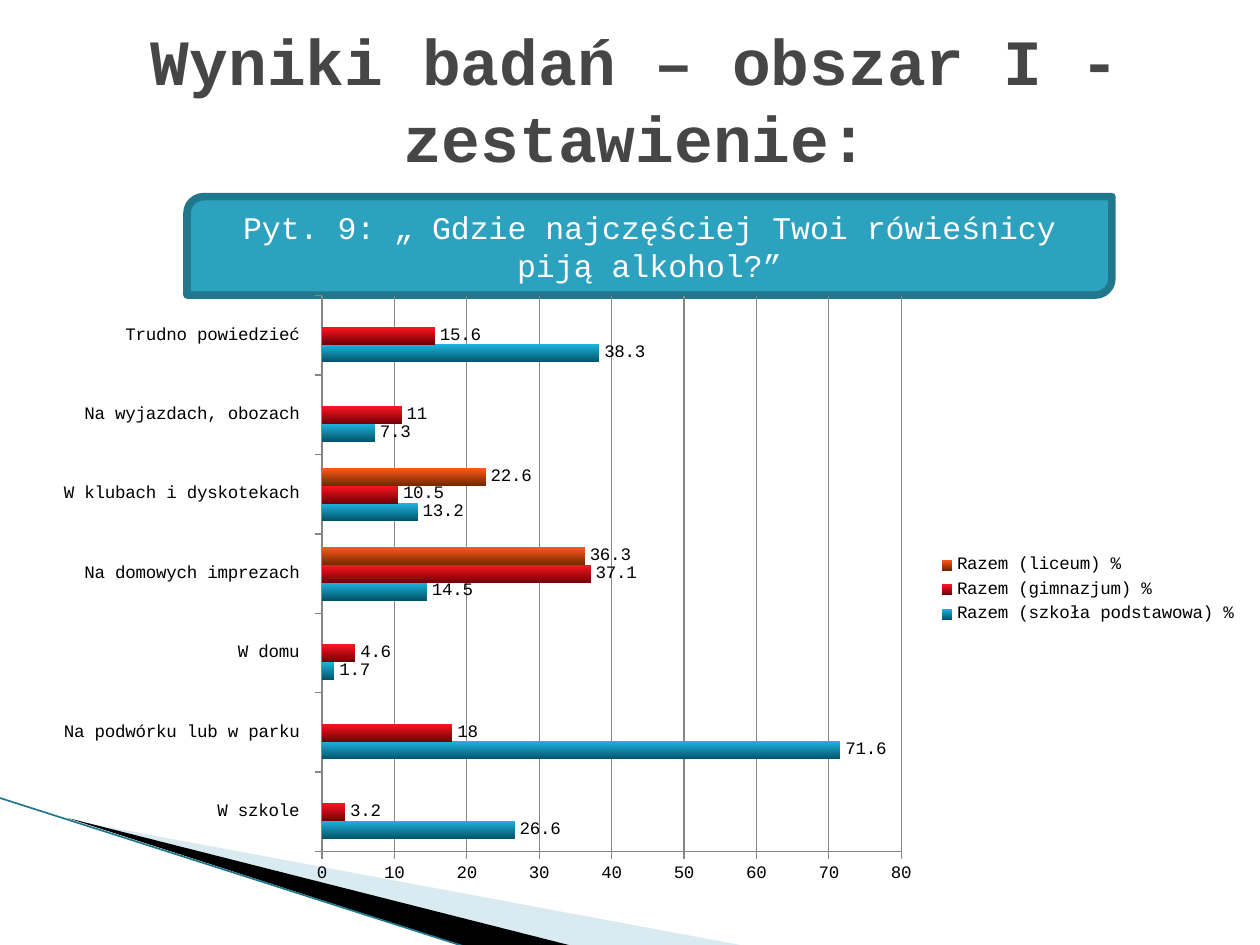
from dataclasses import dataclass

from lxml.etree import SubElement
from pptx import Presentation
from pptx.chart.data import CategoryChartData as ChartData
from pptx.dml.color import RGBColor as Rgb
from pptx.enum.chart import XL_CHART_TYPE as ChartType
from pptx.enum.chart import XL_LABEL_POSITION as LabelSpot
from pptx.enum.chart import XL_LEGEND_POSITION as LegendSpot
from pptx.enum.chart import XL_TICK_MARK as TickMark
from pptx.enum.shapes import MSO_CONNECTOR as Connector
from pptx.enum.shapes import MSO_SHAPE as Preset
from pptx.enum.text import MSO_ANCHOR as Anchor
from pptx.enum.text import PP_ALIGN as Align
from pptx.oxml import parse_xml
from pptx.oxml.ns import nsdecls, qn
from pptx.util import Pt


@dataclass(frozen=True)
class Theme:
    font: str = "Courier New"
    title_size: float = 36.9
    question_size: float = 18
    chart_size: float = 10
    title: str = "464646"
    white: str = "FFFFFF"
    black: str = "000000"
    teal: str = "2DA2BF"
    dark_teal: str = "21788D"
    pale_teal: str = "A0CBDC"
    grid: str = "868686"
    blue_bar: tuple = ("1FB4E0", "00566B")
    red_bar: tuple = ("FF1520", "740006")
    orange_bar: tuple = ("FF5A18", "762800")


THEME = Theme()

CATEGORIES = [
    "W szkole ", "Na podwórku lub w parku ", "W domu ",
    "Na domowych imprezach ", "W klubach i dyskotekach ",
    "Na wyjazdach, obozach ", "Trudno powiedzieć ",
]
# Name, values, gradient from top to bottom
SERIES = [
    ("Razem (szkoła podstawowa) % ",
     [26.6, 71.6, 1.7, 14.5, 13.2, 7.3, 38.3], THEME.blue_bar),
    ("Razem (gimnazjum) % ",
     [3.2, 18, 4.6, 37.1, 10.5, 11, 15.6], THEME.red_bar),
    ("Razem (liceum) %",
     [None, None, None, 36.3, 22.6, None, None], THEME.orange_bar),
]


def color(value):
    return Rgb.from_string(value)


def apply(target, **formats):
    for name, setting in formats.items():
        setattr(target, name, setting)


def set_font(font, size, value, bold=False):
    apply(font, name=THEME.font, size=Pt(size), bold=bold)
    font.color.rgb = color(value)


def write_text(box, text, size, value, bold=False):
    frame = box.text_frame
    apply(frame, word_wrap=True, vertical_anchor=Anchor.MIDDLE)
    para = frame.paragraphs[0]
    para.alignment = Align.CENTER
    span = para.add_run()
    span.text = text
    set_font(span.font, size, value, bold)


def set_frame(wedge, left, top, width, height):
    """Give the wedge a frame of its own while its corners stay in place."""
    shift = {"x": wedge.left - Pt(left), "y": wedge.top - Pt(top)}
    outline = wedge._element.spPr.find(".//" + qn("a:path"))
    outline.set("w", str(Pt(width)))
    outline.set("h", str(Pt(height)))
    for corner in outline.iter(qn("a:pt")):
        for axis, distance in shift.items():
            corner.set(axis, str(int(corner.get(axis)) + distance))
    apply(wedge, left=Pt(left), top=Pt(top), width=Pt(width), height=Pt(height))


def add_wedge(page, points, frame, value, alpha=None):
    start, *rest = [(Pt(x), Pt(y)) for x, y in points]
    builder = page.shapes.build_freeform(*start, scale=1.0)
    builder.add_line_segments(rest, close=True)
    wedge = builder.convert_to_shape()
    set_frame(wedge, *frame)
    wedge.shadow.inherit = False
    wedge.line.fill.background()
    wedge.fill.solid()
    wedge.fill.fore_color.rgb = color(value)
    if alpha is not None:
        tone = wedge.fill._xPr.find(".//" + qn("a:srgbClr"))
        SubElement(tone, qn("a:alpha")).set("val", str(alpha * 1000))


def add_rule(page, start, end, value, width):
    rule = page.shapes.add_connector(
        Connector.STRAIGHT, *[Pt(length) for length in (*start, *end)])
    rule.line.color.rgb = color(value)
    rule.line.width = Pt(width)
    SubElement(rule._element.spPr, qn("a:effectLst"))


def add_title(page, text):
    box = page.shapes.add_textbox(Pt(39.4), Pt(11.2), Pt(648), Pt(90))
    write_text(box, text, THEME.title_size, THEME.title, bold=True)


def add_question(page, text):
    box = page.shapes.add_shape(
        Preset.ROUND_2_DIAG_RECTANGLE, Pt(106.9), Pt(112.4), Pt(528.5), Pt(56.2))
    box.shadow.inherit = False
    box.fill.solid()
    box.fill.fore_color.rgb = color(THEME.teal)
    box.line.color.rgb = color(THEME.dark_teal)
    box.line.width = Pt(4.33)
    write_text(box, text, THEME.question_size, THEME.white)


def style_axis(axis):
    apply(axis, major_tick_mark=TickMark.OUTSIDE, minor_tick_mark=TickMark.NONE)
    axis.format.line.color.rgb = color(THEME.grid)
    axis.format.line.width = Pt(0.75)


def style_series(series, shades):
    series.invert_if_negative = False
    fill = series.format.fill
    fill.gradient()
    fill.gradient_angle = 270
    for stop, shade, position in zip(fill.gradient_stops, shades, (0, 1)):
        stop.color.rgb = color(shade)
        stop.position = position
    labels = series.data_labels
    apply(labels, show_value=True, position=LabelSpot.OUTSIDE_END)
    set_font(labels.font, THEME.chart_size, THEME.black)


def place_plot(holder, left, top, width, height):
    area = holder.chart._chartSpace.chart.plotArea
    for old in area.findall(qn("c:layout")):
        area.remove(old)
    fractions = {"x": Pt(left) / holder.width, "y": Pt(top) / holder.height,
                 "w": Pt(width) / holder.width, "h": Pt(height) / holder.height}
    places = "".join(
        f'<c:{name} val="{value:.4f}"/>' for name, value in fractions.items())
    area.insert(0, parse_xml(
        f'<c:layout {nsdecls("c")}><c:manualLayout>'
        '<c:layoutTarget val="inner"/>'
        '<c:xMode val="edge"/><c:yMode val="edge"/>'
        f'{places}</c:manualLayout></c:layout>'))


def add_results(page):
    data = ChartData()
    data.categories = CATEGORIES
    for name, values, _ in SERIES:
        data.add_series(name, values)
    holder = page.shapes.add_chart(
        ChartType.BAR_CLUSTERED, Pt(22.3), Pt(162), Pt(697.7), Pt(350), data)
    chart = holder.chart
    set_font(chart.font, THEME.chart_size, THEME.black)
    chart.has_title = False
    place_plot(holder, 161.7, 7, 331, 317.7)

    # Legend
    chart.has_legend = True
    apply(chart.legend, position=LegendSpot.RIGHT, include_in_layout=False)

    # Axes
    style_axis(chart.category_axis)
    scale = chart.value_axis
    style_axis(scale)
    apply(scale, minimum_scale=0, maximum_scale=80, major_unit=10,
          has_major_gridlines=True)
    grid = scale.major_gridlines.format.line
    grid.color.rgb = color(THEME.grid)
    grid.width = Pt(0.75)

    # Bars
    plot = chart.plots[0]
    apply(plot, gap_width=150, overlap=0, vary_by_categories=False)
    for series, (_, _, shades) in zip(plot.series, SERIES):
        style_series(series, shades)


def main():
    deck = Presentation()
    deck.slide_width, deck.slide_height = Pt(720), Pt(540)
    page = deck.slides.add_slide(deck.slide_layouts[6])

    # Corner decoration
    add_wedge(page, [(39.6, 468.5), (428.4, 541), (328.3, 541)],
              (56.2, 393.8, 299.5, 113.8), THEME.pale_teal, 40)
    add_wedge(page, [(38.2, 467.3), (329, 541), (267.8, 541.4)],
              (-4.3, 455.8, 299.5, 66.2), THEME.black)
    add_rule(page, (-0.7, 455.8), (267.1, 541.4), THEME.dark_teal, 0.95)

    # Heading, question and answers
    add_title(page, "Wyniki badań – obszar I - zestawienie:")
    add_question(
        page, "Pyt. 9: „ Gdzie najczęściej Twoi rówieśnicy piją alkohol?”")
    add_results(page)
    deck.save("out.pptx")


if __name__ == "__main__":
    main()
